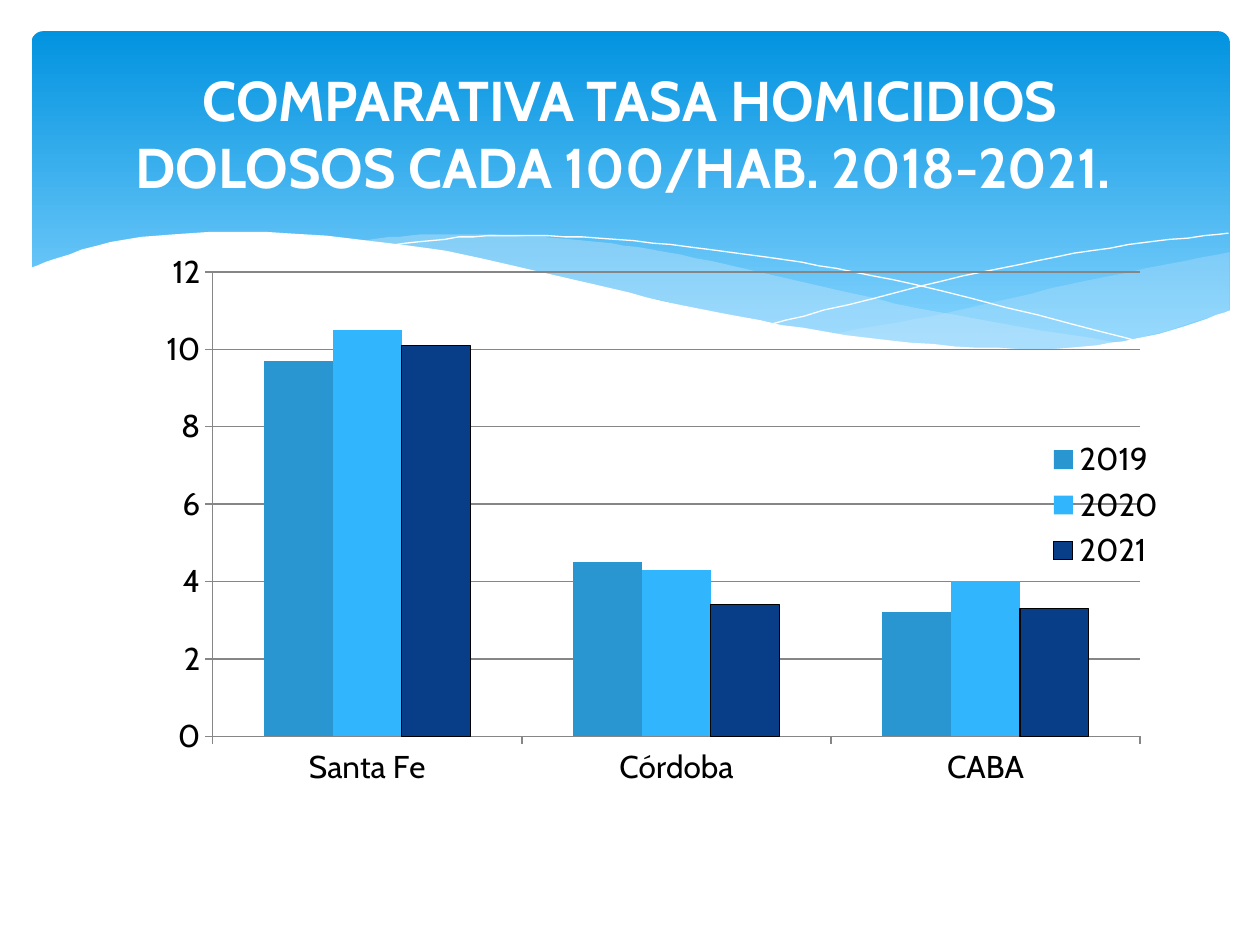
import lxml.etree
import pptx
import pptx.chart.data
import pptx.dml.color
import pptx.enum.chart
import pptx.enum.shapes
import pptx.enum.text
import pptx.oxml
import pptx.oxml.ns
import pptx.util

RGB = pptx.dml.color.RGBColor
WHITE, BLACK, GREY = (RGB.from_string(c) for c in ("FFFFFF", "000000", "868686"))
BAND_TOP, BAND_BOTTOM, PALE = (RGB.from_string(c) for c in ("0293E0", "83D3FE", "C6E7FC"))
BARS = [RGB.from_string(c) for c in ("2996D2", "31B6FD", "073E87")]
FONT = "Cabin"

prs = pptx.Presentation()
prs.slide_width, prs.slide_height = pptx.util.Inches(10), pptx.util.Inches(7.5)
W, H = prs.slide_width, prs.slide_height
s = prs.slides.add_slide(prs.slide_layouts[5])
qn = pptx.oxml.ns.qn


def box(x, y, w, h):
    """Turn shares of the slide's size into left, top, width and height."""
    return int(x * W), int(y * H), int(w * W), int(h * H)


def smooth(knots, steps=8):
    """Sample a Catmull-Rom curve through the knots."""
    padded = [knots[0], *knots, knots[-1]]
    points = [knots[0]]
    for quad in zip(padded, padded[1:], padded[2:], padded[3:]):
        for i in range(1, steps + 1):
            t = i / steps
            points.append(tuple(
                b + t * (c - a + t * (2 * a - 5 * b + 4 * c - d + t * (3 * (b - c) + d - a))) / 2
                for a, b, c, d in zip(*quad)))
    return points


# Gradient band
band = s.shapes.add_shape(pptx.enum.shapes.MSO_SHAPE.ROUNDED_RECTANGLE,
                          *box(0.025, 0.033, 0.951, 0.36))
band.adjustments[0] = 0.034
band.shadow.inherit = False
band.line.fill.background()
band.fill.gradient()
band.fill.gradient_angle = 270
for stop, color, position in zip(band.fill.gradient_stops, (BAND_TOP, BAND_BOTTOM), (0, 0.9)):
    stop.color.rgb = color
    stop.position = position

# Waves: opacity in percent (None for a line) and edges in hundredths of an inch
waves = [
    (29, [[(976, 200), (861, 223), (753, 248), (661, 265)],
          [(661, 265), (745, 275), (814, 278), (889, 272), (976, 247)]]),
    (40, [[(286, 191), (344, 186), (442, 189), (528, 200), (629, 222), (741, 247), (893, 273)],
          [(893, 273), (828, 278), (722, 274), (601, 255), (449, 222), (286, 191)]]),
    (None, [[(309, 195), (387, 187), (489, 190), (608, 204), (727, 226), (907, 272)]]),
    (None, [[(613, 257), (748, 223), (866, 199), (975, 185)]]),
    (100, [[(23, 213), (100, 190), (211, 184), (340, 197), (447, 220), (555, 245),
            (688, 268), (823, 277), (910, 267), (977, 246)],
           [(977, 329), (23, 329)]]),
]
for opacity, edges in waves:
    points = [point for edge in edges for point in smooth(edge)]
    builder = s.shapes.build_freeform(*points[0], scale=W / 1000)
    builder.add_line_segments(points[1:], close=opacity is not None)
    wave = builder.convert_to_shape()
    wave.shadow.inherit = False
    if opacity is None:
        wave.fill.background()
        wave.line.color.rgb = WHITE
        wave.line.width = 0
    else:
        wave.line.fill.background()
        wave.fill.solid()
        wave.fill.fore_color.rgb = WHITE if opacity == 100 else PALE
        if opacity < 100:
            color = wave._element.spPr.find(".//" + qn("a:srgbClr"))
            lxml.etree.SubElement(color, qn("a:alpha")).set("val", str(opacity * 1000))

# Chart
data = pptx.chart.data.CategoryChartData()
data.categories = ["Santa Fe", "Córdoba", "CABA"]
data.add_series("2019", (9.7, 4.5, 3.2))
data.add_series("2020", (10.5, 4.3, 4))
data.add_series("2021", (10.1, 3.4, 3.3))
chart = s.shapes.add_chart(pptx.enum.chart.XL_CHART_TYPE.COLUMN_CLUSTERED,
                           *box(0.083, 0.227, 0.85, 0.609), data).chart
chart.has_title = False
chart.font.name, chart.font.size = FONT, pptx.util.Pt(18)
chart.font.color.rgb = BLACK
plot = chart.plots[0]
plot.gap_width, plot.overlap, plot.vary_by_categories = 150, 0, False
for series, color in zip(plot.series, BARS):
    series.format.fill.solid()
    series.format.fill.fore_color.rgb = color
    series.invert_if_negative = False
outline = plot.series[-1].format.line
outline.color.rgb = BLACK
outline.width = pptx.util.Pt(0.75)

values, categories = chart.value_axis, chart.category_axis
values.minimum_scale, values.maximum_scale, values.major_unit = 0, 12, 2
for line in (values.format.line, values.major_gridlines.format.line, categories.format.line):
    line.color.rgb = GREY
    line.width = pptx.util.Pt(0.75)
for axis in (values, categories):
    axis.major_tick_mark = pptx.enum.chart.XL_TICK_MARK.OUTSIDE

chart.has_legend = True
chart.legend.position = pptx.enum.chart.XL_LEGEND_POSITION.RIGHT
chart.legend.include_in_layout = False

# Fixed places for the plot area and the legend, as shares of the chart
plot_area, legend = chart._chartSpace.chart.plotArea, chart.legend._element
for parent, index, target, place in (
        (plot_area, 0, '<c:layoutTarget val="inner"/>', (0.101, 0.1, 0.866, 0.807)),
        (legend, 1, "", (0.87, 0.38, 0.13, 0.25))):
    for old in parent.findall(qn("c:layout")):
        parent.remove(old)
    settings = [("xMode", "edge"), ("yMode", "edge"), *zip("xywh", place)]
    manual = target + "".join(f'<c:{tag} val="{value}"/>' for tag, value in settings)
    parent.insert(index, pptx.oxml.parse_xml(
        f"<c:layout {pptx.oxml.ns.nsdecls('c')}>"
        f"<c:manualLayout>{manual}</c:manualLayout></c:layout>"))

# Title, in front of the band
title = s.shapes.title
title._element.getparent().append(title._element)
title.left, title.top, title.width, title.height = box(0.05, 0.049, 0.9, 0.183)
tf = title.text_frame
tf.text = "COMPARATIVA TASA HOMICIDIOS DOLOSOS CADA 100/HAB. 2018-2021. "
tf.word_wrap = True
tf.vertical_anchor = pptx.enum.text.MSO_ANCHOR.MIDDLE
p = tf.paragraphs[0]
p.alignment = pptx.enum.text.PP_ALIGN.CENTER
font = p.runs[0].font
font.name, font.size, font.bold = FONT, pptx.util.Pt(32), True
font.color.rgb = WHITE

prs.save("out.pptx")
